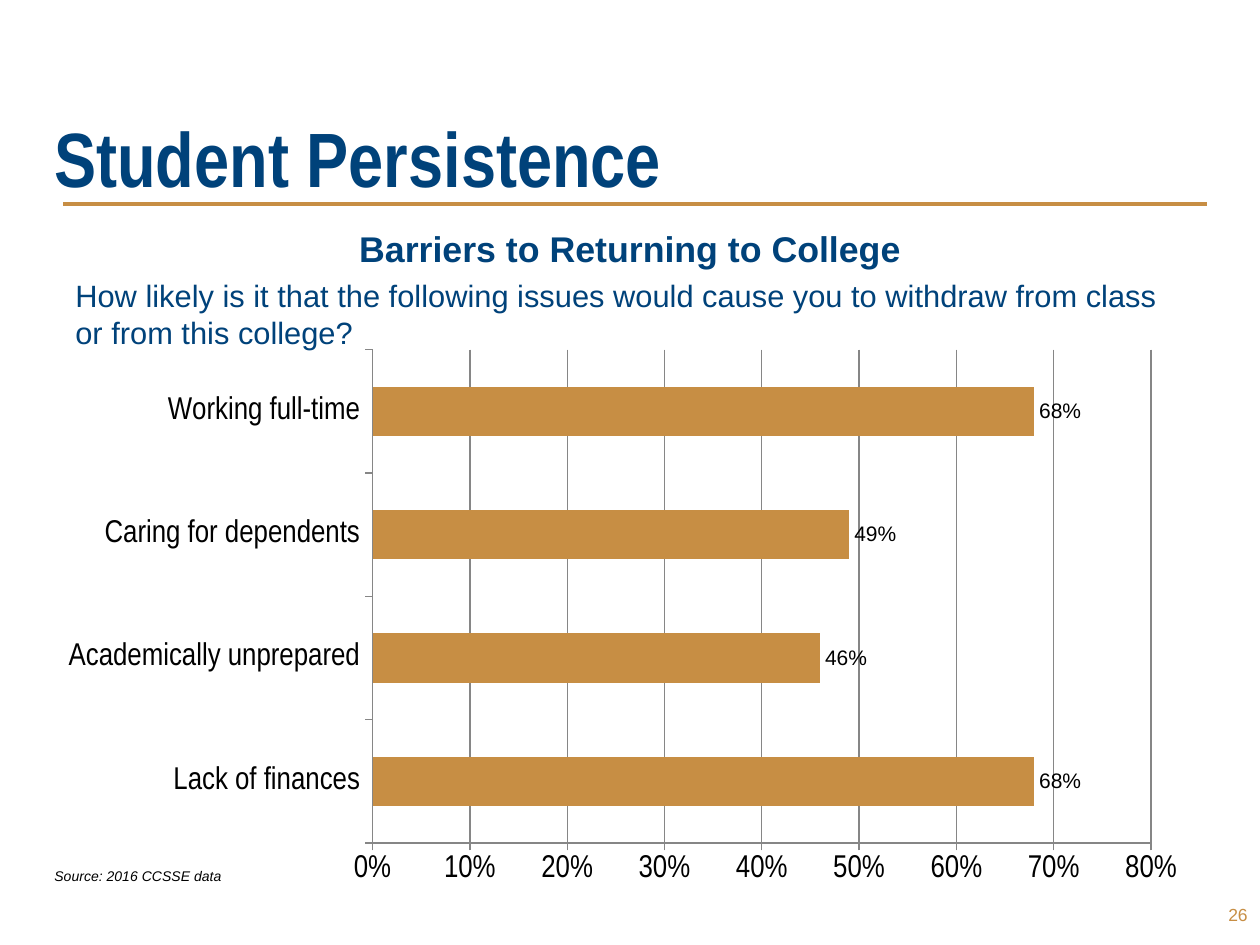
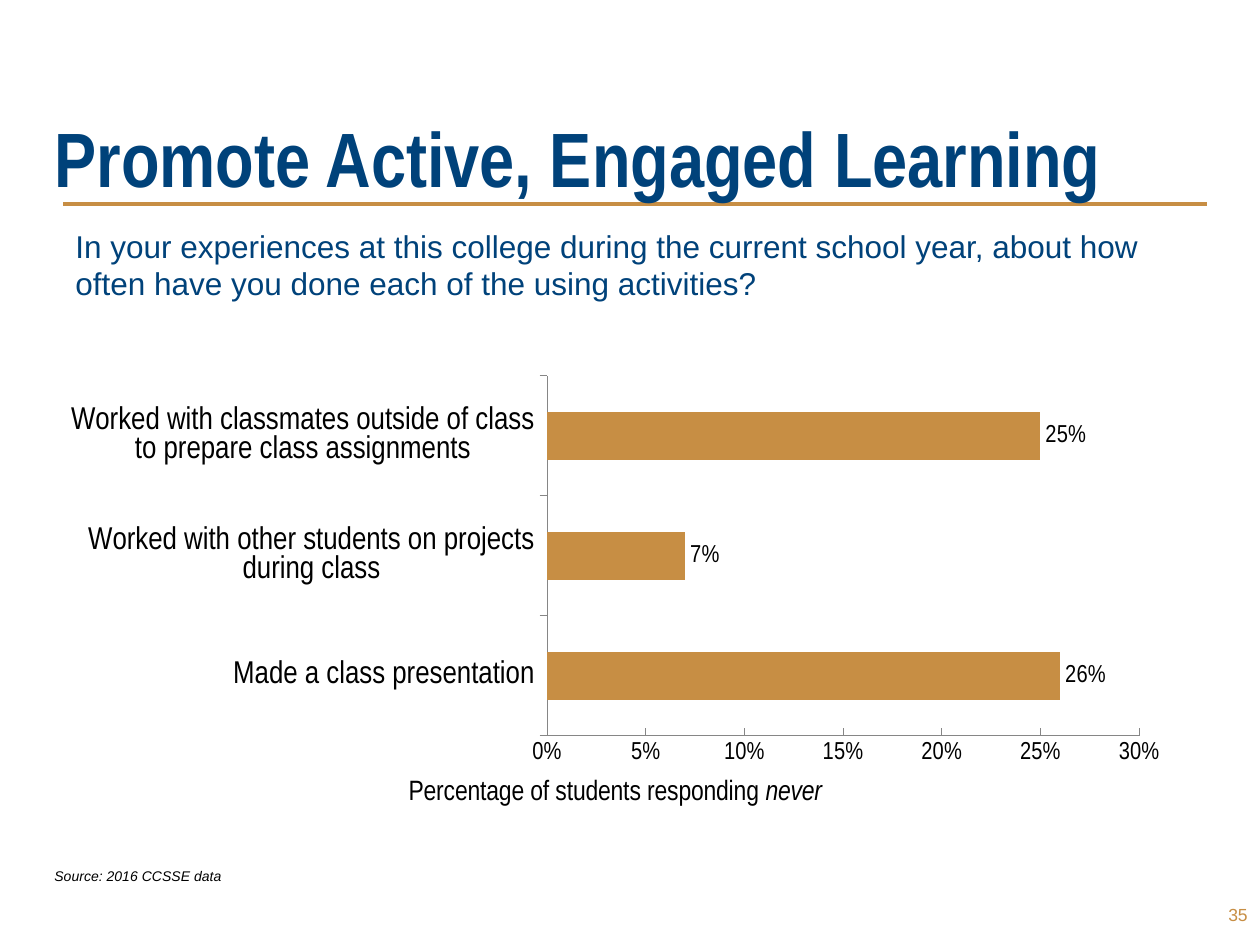
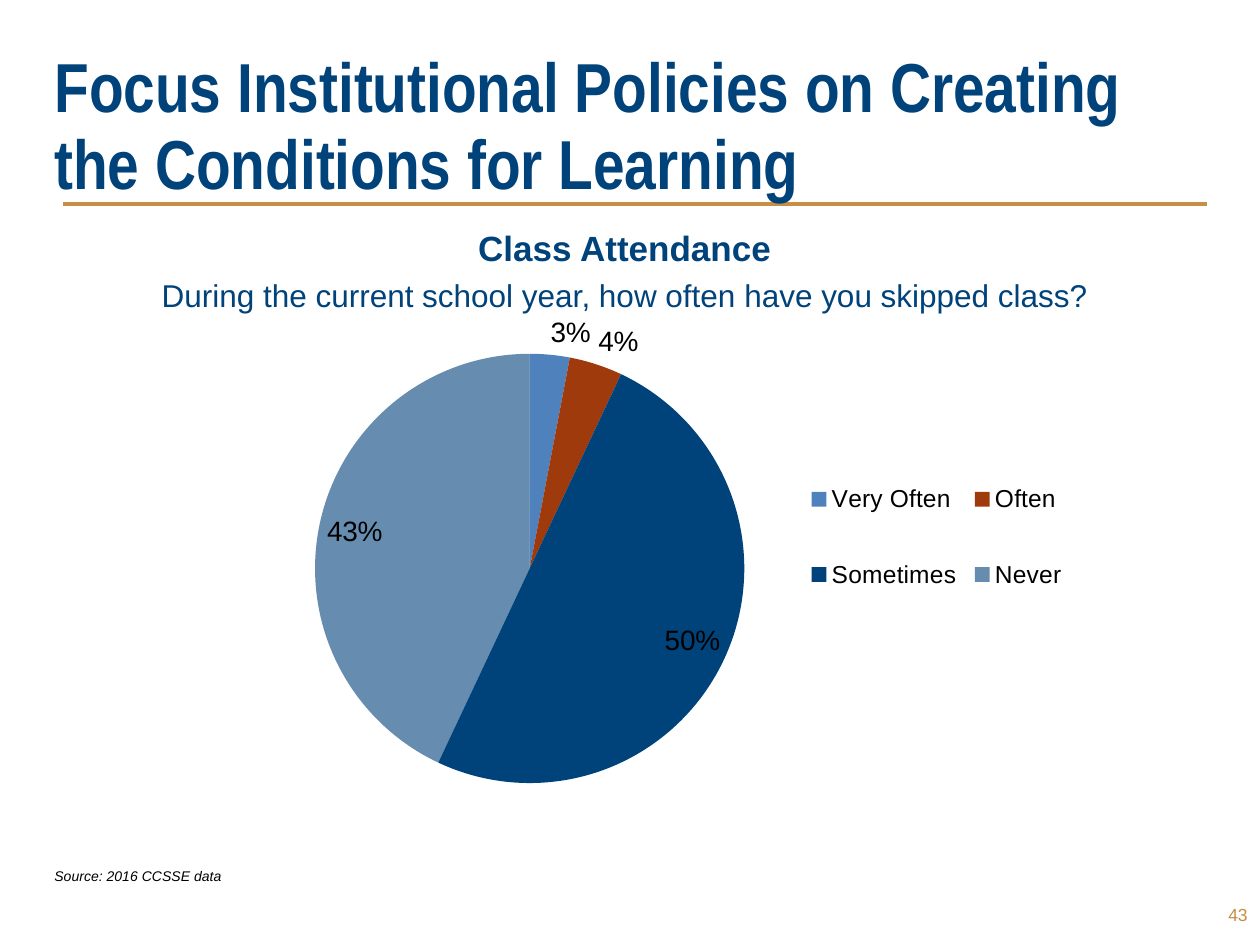
import pptx
import pptx.chart.data
import pptx.dml.color
import pptx.enum.chart
import pptx.enum.shapes
import pptx.enum.text
import pptx.oxml.ns
import pptx.util
import lxml.etree

Pt = pptx.util.Pt
RGBColor = pptx.dml.color.RGBColor
qn = pptx.oxml.ns.qn
Align = pptx.enum.text.PP_ALIGN
Anchor = pptx.enum.text.MSO_ANCHOR
Kind = pptx.enum.chart.XL_CHART_TYPE
Tick = pptx.enum.chart.XL_TICK_MARK
Spot = pptx.enum.chart.XL_LABEL_POSITION

NAVY = RGBColor(0x00, 0x42, 0x7A)
GOLD = RGBColor(0xC7, 0x8E, 0x44)
BLUE = RGBColor(0x4F, 0x81, 0xBD)
RUST = RGBColor(0x9F, 0x3A, 0x0D)
GRAY = RGBColor(0x86, 0x86, 0x86)
BLACK = RGBColor(0, 0, 0)
SANS = "Arial"
NARROW = "Arial Narrow"


def style(font, size, color=BLACK, name=SANS, bold=False, italic=False):
    font.size = Pt(size)
    font.color.rgb = color
    font.name = name
    font.bold = bold
    font.italic = italic


def add_text(slide, box, lines, anchor=Anchor.TOP):
    frame = slide.shapes.add_textbox(*map(Pt, box)).text_frame
    frame.word_wrap = True
    frame.vertical_anchor = anchor
    for i, (text, align, look) in enumerate(lines):
        para = frame.add_paragraph() if i else frame.paragraphs[0]
        para.text = text
        para.alignment = align
        if i:
            para.space_before = Pt(4)
        style(para.font, **look)
    return frame


def add_rule(slide):
    line = slide.shapes.add_connector(
        pptx.enum.shapes.MSO_CONNECTOR.STRAIGHT,
        Pt(36), Pt(116.64), Pt(689.76), Pt(116.64))
    line.line.color.rgb = GOLD
    line.line.width = Pt(2.25)
    lxml.etree.SubElement(line._element.spPr, qn("a:effectLst"))


def add_base(deck, title, number, size=44):
    slide = deck.slides.add_slide(deck.slide_layouts[6])
    add_rule(slide)
    look = dict(size=size, color=NAVY, name=NARROW, bold=True)
    frame = add_text(slide, (24, 38, 672, 81.5),
                     [(title, Align.LEFT, look)], Anchor.BOTTOM)
    frame.paragraphs[0].line_spacing = Pt(44)
    add_text(slide, (672, 510, 48, 25),
             [(number, Align.RIGHT, dict(size=10, color=GOLD))], Anchor.MIDDLE)
    add_text(slide, (24, 492, 144, 17),
             [("Source: 2016 CCSSE data", Align.LEFT, dict(size=8, italic=True))])
    return slide


def set_place(parent, index, box, inner=False):
    for old in parent.findall(qn("c:layout")):
        parent.remove(old)
    layout = lxml.etree.Element(qn("c:layout"))
    hand = lxml.etree.SubElement(layout, qn("c:manualLayout"))
    parts = [("layoutTarget", "inner")] if inner else []
    parts += [("xMode", "edge"), ("yMode", "edge"), *zip("xywh", box)]
    for tag, value in parts:
        lxml.etree.SubElement(hand, qn("c:" + tag)).set("val", str(value))
    parent.insert(index, layout)


def add_chart(slide, kind, box, place, cats, vals):
    data = pptx.chart.data.CategoryChartData(number_format="0%")
    data.categories = cats
    data.add_series("Series 1", vals)
    chart = slide.shapes.add_chart(kind, *map(Pt, box), data).chart
    chart.has_title = False
    chart.has_legend = False
    style(chart.font, 18)
    set_place(chart._chartSpace.chart.plotArea, 0, place, True)
    return chart


def set_labels(plot, size, name=SANS):
    plot.has_data_labels = True
    labels = plot.data_labels
    labels.show_value = True
    labels.number_format = "0%"
    labels.number_format_is_linked = False
    style(labels.font, size, name=name)
    return labels


def set_axis(axis, size, tick):
    axis.major_tick_mark = tick
    axis.minor_tick_mark = Tick.NONE
    axis.has_major_gridlines = False
    axis.format.line.color.rgb = GRAY
    axis.format.line.width = Pt(0.75)
    style(axis.tick_labels.font, size, name=NARROW)


def add_bars(slide, box, place, cats, vals, top, step, size, tick, label):
    chart = add_chart(slide, Kind.BAR_CLUSTERED, box, place, cats, vals)
    plot = chart.plots[0]
    plot.gap_width = 150
    plot.vary_by_categories = False
    fill = plot.series[0].format.fill
    fill.solid()
    fill.fore_color.rgb = GOLD
    set_labels(plot, *label).position = Spot.OUTSIDE_END
    set_axis(chart.category_axis, 18, Tick.OUTSIDE)
    axis = chart.value_axis
    set_axis(axis, size, tick)
    axis.minimum_scale = 0
    axis.maximum_scale = top
    axis.major_unit = step
    axis.tick_labels.number_format = "0%"
    axis.tick_labels.number_format_is_linked = False
    return axis


def add_grid(axis):
    axis.has_major_gridlines = True
    axis.major_gridlines.format.line.color.rgb = GRAY
    axis.major_gridlines.format.line.width = Pt(0.75)


def name_axis(axis, parts):
    para = axis.axis_title.text_frame.paragraphs[0]
    for text, italic in parts:
        run = para.add_run()
        run.text = text
        style(run.font, 16, name=NARROW, italic=italic)


def add_pie(slide, box, place, cats, vals, colors, key):
    chart = add_chart(slide, Kind.PIE, box, place, cats, vals)
    plot = chart.plots[0]
    plot.vary_by_categories = True
    for i, color in enumerate(colors):
        fill = plot.series[0].points[i].format.fill
        fill.solid()
        fill.fore_color.rgb = color
    last = list(plot._element.iter(qn("a:srgbClr")))[-1]
    lxml.etree.SubElement(last, qn("a:alpha")).set("val", "60000")
    set_labels(plot, 16).position = Spot.BEST_FIT
    chart.has_legend = True
    legend = chart.legend
    legend.position = pptx.enum.chart.XL_LEGEND_POSITION.RIGHT
    legend.include_in_layout = False
    style(legend.font, 14)
    set_place(legend._element, 1, key)


def ask(size):
    return dict(size=size, color=NAVY)


def head(size):
    return dict(size=size, color=NAVY, bold=True)


def show_stay(deck):
    slide = add_base(deck, "Student Persistence", "26")
    add_text(slide, (36, 126, 648, 66), [
        ("Barriers to Returning to College", Align.CENTER, head(20.4)),
        ("How likely is it that the following issues would cause you to "
         "withdraw from class or from this college?", Align.LEFT, ask(17.6))])
    axis = add_bars(
        slide, (26.5, 193.5, 660, 318.5), (0.2825, 0.02, 0.674, 0.885),
        ["Lack of finances", "Academically unprepared",
         "Caring for dependents", "Working full-time"],
        [0.68, 0.46, 0.49, 0.68], 0.8, 0.1, 18, Tick.OUTSIDE, (12,))
    add_grid(axis)


def show_work(deck):
    slide = add_base(deck, "Promote Active, Engaged Learning", "35")
    add_text(slide, (36, 126, 654, 78), [
        ("In your experiences at this college during the current school year, "
         "about how often have you done each of the using activities?",
         Align.LEFT, ask(18))])
    axis = add_bars(
        slide, (36, 204, 636, 282), (0.435, 0.038, 0.532, 0.73),
        ["Made a class presentation",
         "Worked with other students on projects during class",
         "Worked with classmates outside of class to prepare class assignments"],
        [0.26, 0.07, 0.25], 0.3, 0.05, 14, Tick.INSIDE, (14, NARROW))
    name_axis(axis, [("Percentage of students responding ", False),
                     ("never", True)])


def show_skips(deck):
    slide = add_base(deck, "Focus Institutional Policies on Creating "
                     "the Conditions for Learning", "43", 39.6)
    add_text(slide, (30, 126, 654, 78), [
        ("Class Attendance", Align.CENTER, head(20)),
        ("During the current school year, how often have you skipped class?",
         Align.CENTER, ask(18))])
    add_pie(slide, (66, 144, 594, 354), (0.192, 0.042, 0.413, 0.938),
            ["Very Often", "Often", "Sometimes", "Never"],
            [0.03, 0.04, 0.5, 0.43], [BLUE, RUST, NAVY, NAVY],
            (0.66, 0.3, 0.26, 0.32))


def main():
    deck = pptx.Presentation()
    deck.slide_width = Pt(720)
    deck.slide_height = Pt(540)
    show_stay(deck)
    show_work(deck)
    show_skips(deck)
    deck.save("out.pptx")


if __name__ == "__main__":
    main()
